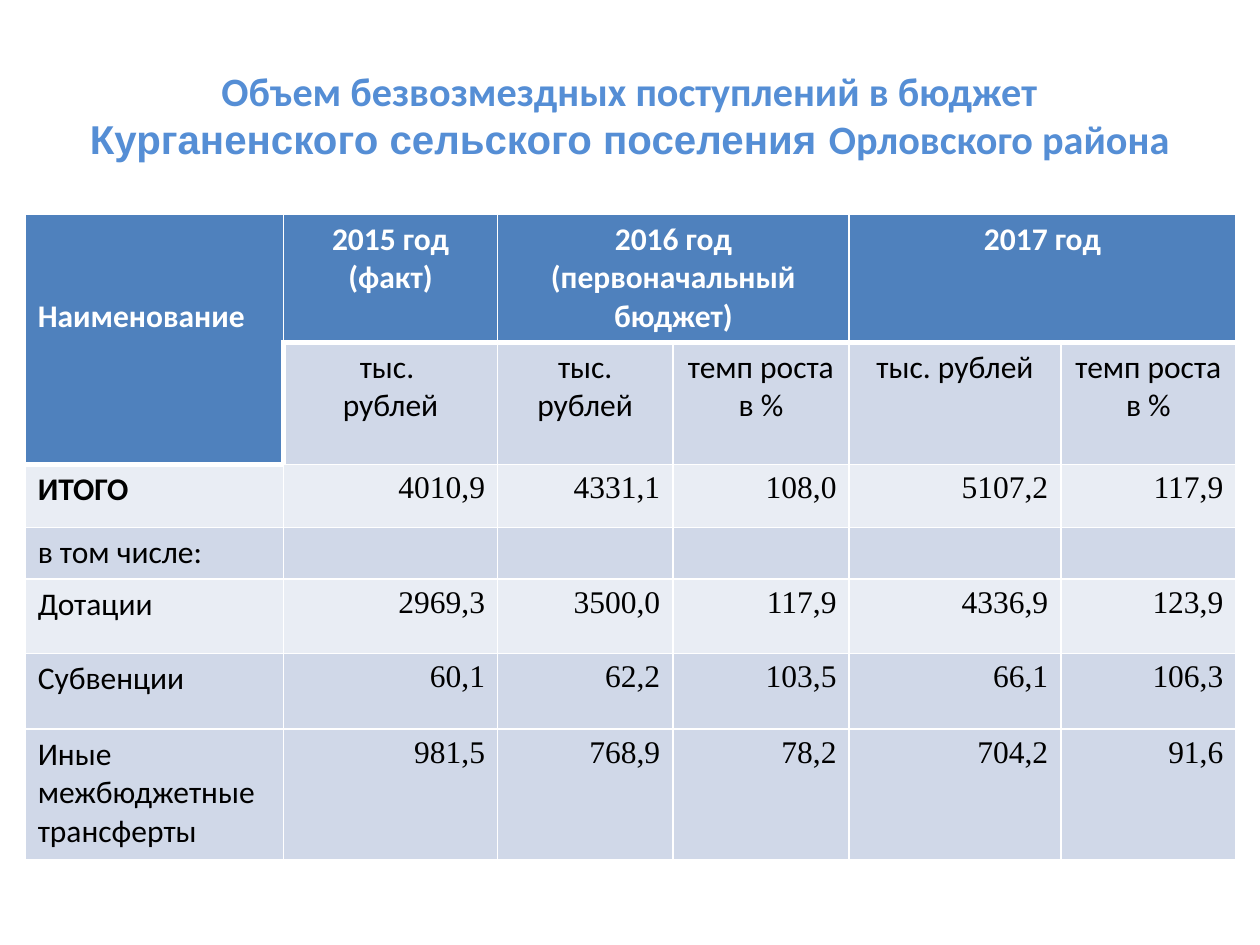
from dataclasses import dataclass

from lxml.etree import SubElement
from pptx import Presentation
from pptx.dml.color import RGBColor
from pptx.enum.text import MSO_ANCHOR, MSO_AUTO_SIZE, PP_ALIGN
from pptx.oxml.ns import qn
from pptx.util import Inches, Pt


@dataclass(frozen=True)
class Theme:
    """Colours, fonts and type sizes of the slide."""
    title: str = "558ED5"
    head: str = "4F81BD"
    band: str = "D0D8E8"
    light: str = "E9EDF4"
    white: str = "FFFFFF"
    black: str = "000000"
    font: str = "Calibri"
    title_alt: str = "Arial"
    figures: str = "Times New Roman"
    title_size: int = 23
    size: int = 18
    thin: int = 1
    thick: int = 3


T = Theme()
COLS = [2.05, 1.7, 1.39, 1.4, 1.68, 1.39]
ROWS = [1, 0.97, 0.5, 0.41, 0.59, 0.6, 1.04]
TITLE = [
    ("Объем безвозмездных поступлений в бюджет ", T.font),
    ("Курганенского сельского поселения ", T.title_alt),
    ("Орловского района", T.font),
]
YEARS = [
    (1, 1, "2015 год (факт)"),
    (2, 3, "2016 год (первоначальный бюджет)"),
    (4, 5, "2017 год"),
]
UNITS = ["тыс. \nрублей", "тыс. рублей", "темп роста в %",
         "тыс. рублей", "темп роста в %"]
BODY = [
    ("ИТОГО", T.light, ["4010,9", "4331,1", "108,0", "5107,2", "117,9"]),
    ("в том числе:", T.band, [""] * 5),
    ("Дотации", T.light, ["2969,3", "3500,0", "117,9", "4336,9", "123,9"]),
    ("Субвенции", T.band, ["60,1", "62,2", "103,5", "66,1", "106,3"]),
    ("Иные межбюджетные трансферты", T.band,
     ["981,5", "768,9", "78,2", "704,2", "91,6"]),
]


def add_run(p, text, font, size, color, bold=False):
    """Append one formatted run to a paragraph."""
    r = p.add_run()
    r.text = text
    r.font.name = font
    r.font.size = Pt(size)
    r.font.bold = bold
    r.font.color.rgb = RGBColor.from_string(color)


def add_title(prs, s):
    """Fill and place the title placeholder."""
    sp = s.shapes.title
    sp.left, sp.top = int(prs.slide_width * 0.05), Inches(0.36)
    sp.width, sp.height = int(prs.slide_width * 0.9), Inches(1.1)
    tf = sp.text_frame
    tf.word_wrap = True
    tf.auto_size = MSO_AUTO_SIZE.NONE
    tf.vertical_anchor = MSO_ANCHOR.MIDDLE
    p = tf.paragraphs[0]
    p.alignment = PP_ALIGN.CENTER
    for text, font in TITLE:
        add_run(p, text, font, T.title_size, T.title, True)


def set_borders(cell, **widths):
    """Draw white cell borders, thin unless a side has its own width."""
    tcPr = cell._tc.get_or_add_tcPr()
    for i, side in enumerate("LRTB"):
        width = Pt(widths.get(side, T.thin))
        ln = tcPr.makeelement(qn(f"a:ln{side}"), {"w": str(width)})
        fill = SubElement(ln, qn("a:solidFill"))
        SubElement(fill, qn("a:srgbClr"), val=T.white)
        tcPr.insert(i, ln)


def write_cell(cell, text, fill, align=PP_ALIGN.LEFT, font=T.font,
               color=T.black, bold=False):
    """Fill a cell and write its lines as paragraphs."""
    cell.fill.solid()
    cell.fill.fore_color.rgb = RGBColor.from_string(fill)
    tf = cell.text_frame
    for i, line in enumerate(text.split("\n")):
        p = tf.add_paragraph() if i else tf.paragraphs[0]
        p.alignment = align
        if line:
            add_run(p, line, font, T.size, color, bold)


def add_grid(s):
    """Add the empty table with its column and row sizes."""
    tbl = s.shapes.add_table(len(ROWS), len(COLS), Inches(0.2), Inches(1.7),
                             Inches(sum(COLS)), Inches(sum(ROWS))).table
    tbl.horz_banding = False
    tbl.first_row = False
    for col, width in zip(tbl.columns, COLS):
        col.width = Inches(width)
    for row, height in zip(tbl.rows, ROWS):
        row.height = Inches(height)
    return tbl


def fill_header(tbl):
    """Write the name column, the years and the units."""
    for i in range(len(COLS)):
        write_cell(tbl.cell(0, i), "", T.head)
        set_borders(tbl.cell(0, i), B=T.thick)
    name = tbl.cell(0, 0)
    name.merge(tbl.cell(1, 0))
    name.margin_top, name.margin_bottom = Inches(0.66), 0
    write_cell(name, "Наименование", T.head, color=T.white, bold=True)
    write_cell(tbl.cell(1, 0), "", T.head)
    set_borders(tbl.cell(1, 0), R=T.thick, B=T.thick)
    for first, last, text in YEARS:
        cell = tbl.cell(0, first)
        if last > first:
            cell.merge(tbl.cell(0, last))
        write_cell(cell, text, T.head, PP_ALIGN.CENTER, color=T.white, bold=True)
    for i, text in enumerate(UNITS, 1):
        cell = tbl.cell(1, i)
        write_cell(cell, text, T.band, PP_ALIGN.CENTER)
        set_borders(cell, T=T.thick, L=T.thick if i == 1 else T.thin)


def fill_body(tbl):
    """Write the income rows."""
    for i, (name, fill, values) in enumerate(BODY, 2):
        first = i == 2
        write_cell(tbl.cell(i, 0), name, fill, bold=first)
        set_borders(tbl.cell(i, 0), T=T.thick if first else T.thin)
        for j, value in enumerate(values, 1):
            write_cell(tbl.cell(i, j), value, fill, PP_ALIGN.RIGHT, T.figures)
            set_borders(tbl.cell(i, j))


def main():
    """Build and save the slide."""
    prs = Presentation()
    prs.slide_width, prs.slide_height = Inches(10), Inches(7.5)
    s = prs.slides.add_slide(prs.slide_layouts[5])
    add_title(prs, s)
    tbl = add_grid(s)
    fill_header(tbl)
    fill_body(tbl)
    prs.save("out.pptx")


if __name__ == "__main__":
    main()
